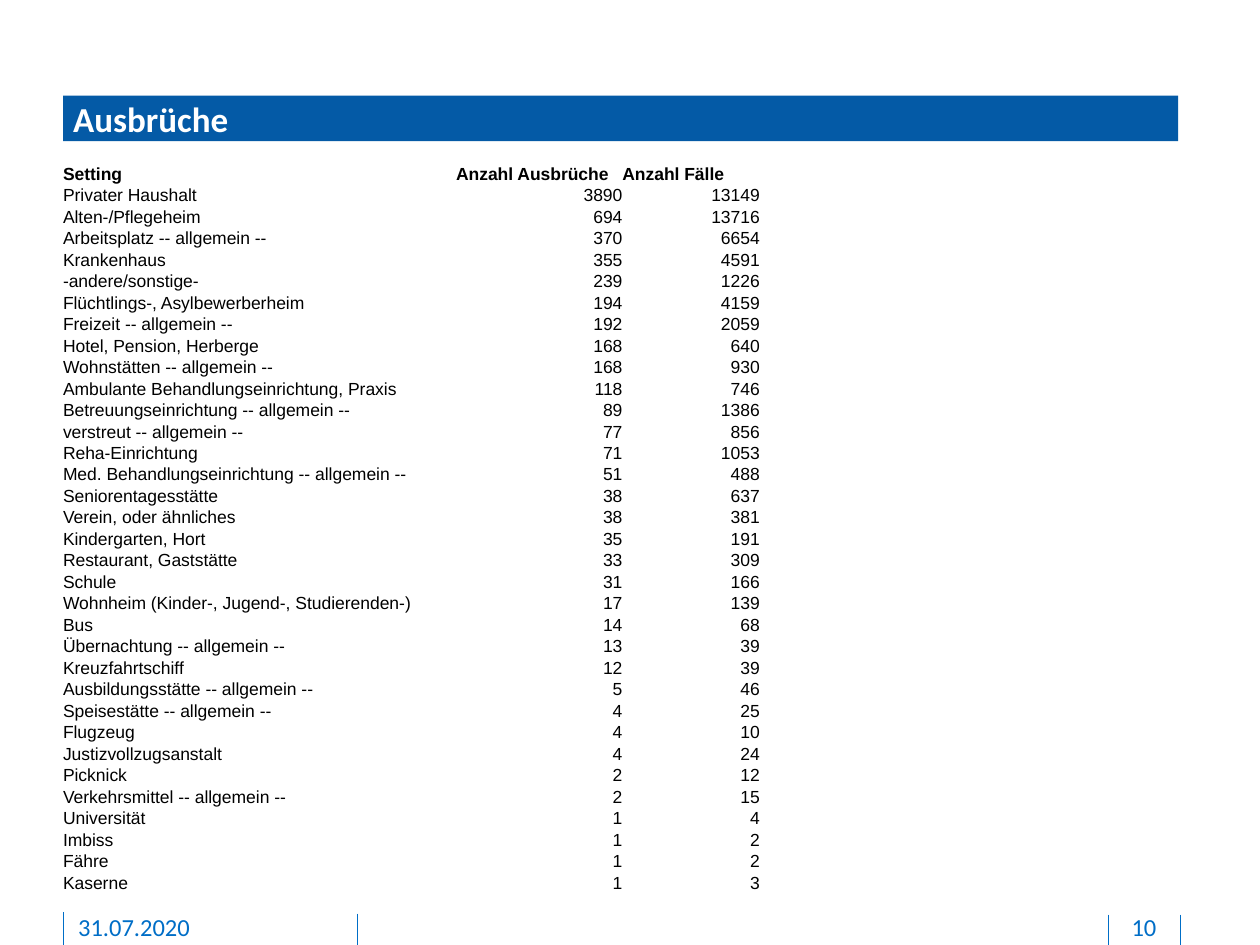
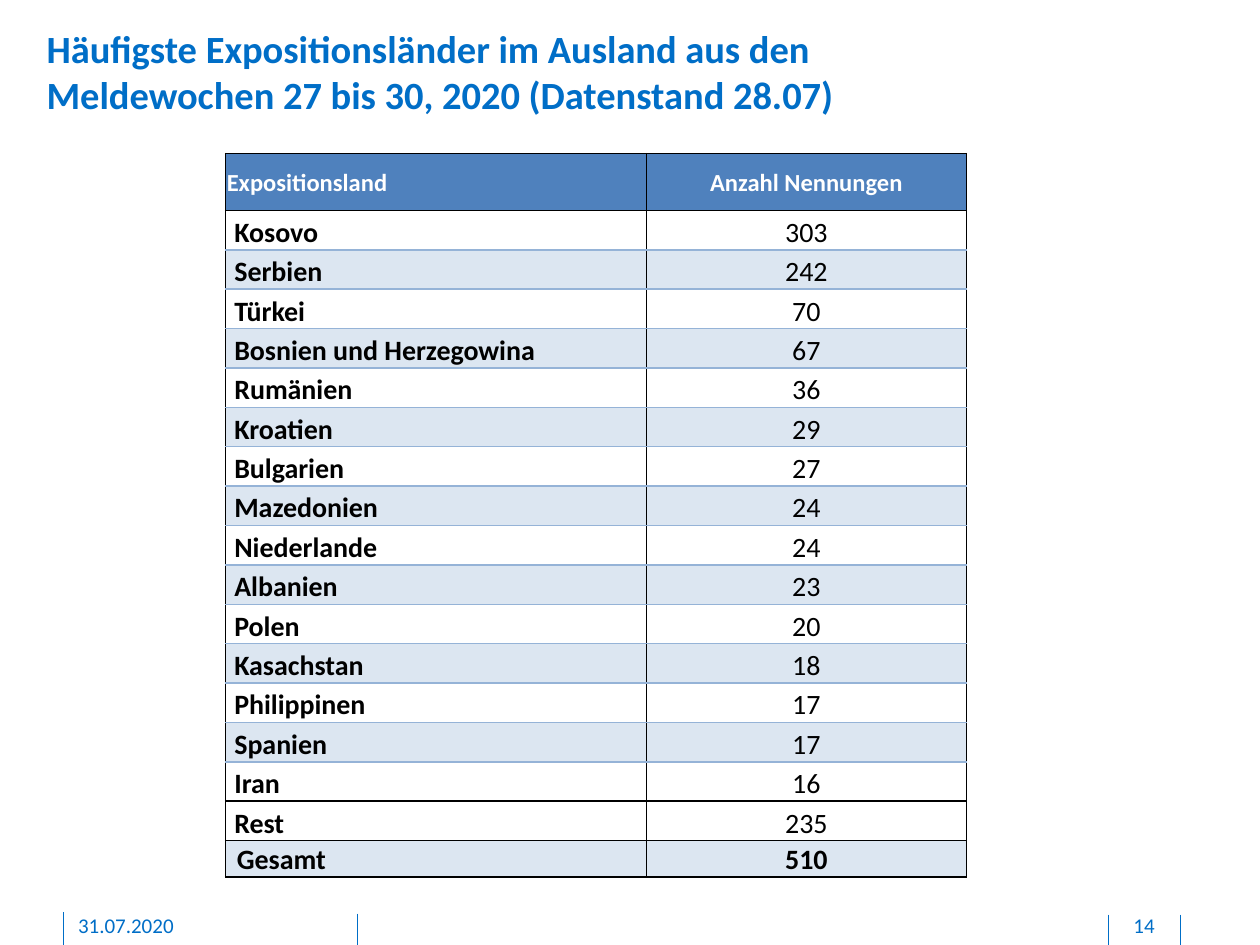
from collections.abc import Callable
from dataclasses import dataclass, replace

import pptx
import pptx.dml.color
import pptx.enum.shapes
import pptx.enum.text
import pptx.oxml
import pptx.oxml.ns
import pptx.util

RGBColor = pptx.dml.color.RGBColor
Anchor = pptx.enum.text.MSO_ANCHOR
Align = pptx.enum.text.PP_ALIGN
Inches, Pt = pptx.util.Inches, pptx.util.Pt

# Shared colours, fonts and sizes
BLUE = RGBColor(0x00, 0x6E, 0xC7)
BAND = RGBColor(0x04, 0x5A, 0xA6)
HEADER = RGBColor(0x4F, 0x81, 0xBD)
STRIPE = RGBColor(0xDC, 0xE6, 0xF1)
RULE = RGBColor(0x95, 0xB3, 0xD7)
BLACK = RGBColor(0x00, 0x00, 0x00)
WHITE = RGBColor(0xFF, 0xFF, 0xFF)
CALIBRI, ARIAL = "Calibri", "Arial"
WIDTH, HEIGHT = Inches(10), Inches(7.5)
PLAIN_TABLE = "{2D5ABB26-0587-4C30-8999-92F81FD0307C}"
DATE = "31.07.2020"

# Footer rules: (x, top) in percent of the slide, all running to the bottom edge
FOOTER_RULES = ((28.4, 96.67), (5, 96.53), (93.7, 96.8), (88, 96.8))


@dataclass(frozen=True)
class Box:
    """Left, top, width and height in percent of the slide."""
    left: float
    top: float
    width: float
    height: float

    def emu(self) -> tuple[int, int, int, int]:
        return across(self.left), down(self.top), across(self.width), down(self.height)


@dataclass(frozen=True)
class TextStyle:
    size: float
    color: RGBColor = BLACK
    bold: bool = False
    font: str = CALIBRI
    align: Align = Align.LEFT


@dataclass(frozen=True)
class CellStyle:
    text: TextStyle
    anchor: Anchor = Anchor.BOTTOM
    margins: tuple[float, float, float, float] = (0, 0, 0, 0)
    spacing: float | None = None
    indent: float = 0
    fill: RGBColor | None = None
    # Colours of the top and bottom borders; None leaves the cell open
    edges: tuple[RGBColor, RGBColor] | None = None


OUTBREAKS = (
    ("Setting", "Anzahl Ausbrüche", "Anzahl Fälle"),
    ("Privater Haushalt", 3890, 13149),
    ("Alten-/Pflegeheim", 694, 13716),
    ("Arbeitsplatz -- allgemein --", 370, 6654),
    ("Krankenhaus", 355, 4591),
    ("-andere/sonstige-", 239, 1226),
    ("Flüchtlings-, Asylbewerberheim", 194, 4159),
    ("Freizeit -- allgemein --", 192, 2059),
    ("Hotel, Pension, Herberge", 168, 640),
    ("Wohnstätten -- allgemein --", 168, 930),
    ("Ambulante Behandlungseinrichtung, Praxis", 118, 746),
    ("Betreuungseinrichtung -- allgemein --", 89, 1386),
    ("verstreut -- allgemein --", 77, 856),
    ("Reha-Einrichtung", 71, 1053),
    ("Med. Behandlungseinrichtung -- allgemein --", 51, 488),
    ("Seniorentagesstätte", 38, 637),
    ("Verein, oder ähnliches", 38, 381),
    ("Kindergarten, Hort", 35, 191),
    ("Restaurant, Gaststätte", 33, 309),
    ("Schule", 31, 166),
    ("Wohnheim (Kinder-, Jugend-, Studierenden-)", 17, 139),
    ("Bus", 14, 68),
    ("Übernachtung -- allgemein --", 13, 39),
    ("Kreuzfahrtschiff", 12, 39),
    ("Ausbildungsstätte -- allgemein --", 5, 46),
    ("Speisestätte -- allgemein --", 4, 25),
    ("Flugzeug", 4, 10),
    ("Justizvollzugsanstalt", 4, 24),
    ("Picknick", 2, 12),
    ("Verkehrsmittel -- allgemein --", 2, 15),
    ("Universität", 1, 4),
    ("Imbiss", 1, 2),
    ("Fähre", 1, 2),
    ("Kaserne", 1, 3),
)

COUNTRIES = (
    ("Expositionsland", "Anzahl Nennungen"),
    ("Kosovo", 303),
    ("Serbien", 242),
    ("Türkei", 70),
    ("Bosnien und Herzegowina", 67),
    ("Rumänien", 36),
    ("Kroatien", 29),
    ("Bulgarien", 27),
    ("Mazedonien", 24),
    ("Niederlande", 24),
    ("Albanien", 23),
    ("Polen", 20),
    ("Kasachstan", 18),
    ("Philippinen", 17),
    ("Spanien", 17),
    ("Iran", 16),
    ("Rest", 235),
    ("Gesamt", 510),
)
REST, TOTAL = len(COUNTRIES) - 2, len(COUNTRIES) - 1


def across(percent: float) -> int:
    return round(WIDTH * percent / 100)


def down(percent: float) -> int:
    return round(HEIGHT * percent / 100)


def write(tf, text: str, style: TextStyle):
    """Put one formatted run into the first paragraph."""
    p = tf.paragraphs[0]
    p.alignment = style.align
    r = p.add_run()
    r.text = text
    r.font.name, r.font.size, r.font.bold = style.font, Pt(style.size), style.bold
    r.font.color.rgb = style.color
    return p


def set_frame(tf, anchor: Anchor, left: float = 0, bottom: float = 0) -> None:
    tf.word_wrap = True
    tf.auto_size = pptx.enum.text.MSO_AUTO_SIZE.NONE
    tf.vertical_anchor = anchor
    tf.margin_left, tf.margin_bottom = Inches(left), Inches(bottom)
    tf.margin_top = tf.margin_right = 0


def add_footer_text(s, box: Box, text: str, style: TextStyle) -> None:
    tf = s.shapes.add_textbox(*box.emu()).text_frame
    set_frame(tf, Anchor.TOP, bottom=0.05)
    write(tf, text, style)


def new_slide(prs, number: int, footer_size: float):
    """Add a slide with the footer rules, date and slide number."""
    s = prs.slides.add_slide(prs.slide_layouts[5])
    for x, top in FOOTER_RULES:
        line = s.shapes.add_connector(pptx.enum.shapes.MSO_CONNECTOR.STRAIGHT,
                                      across(x), down(top), across(x), HEIGHT)
        line.line.color.rgb, line.line.width = BLUE, Pt(0.5)
        line._element.spPr.append(pptx.oxml.parse_xml(
            f"<a:effectLst {pptx.oxml.ns.nsdecls('a')}/>"))
    style = TextStyle(footer_size, BLUE)
    add_footer_text(s, Box(6.2, 96.53, 20.3, 2.8), DATE, style)
    add_footer_text(s, Box(88.1, 96.53, 5.4, 2.8), str(number),
                    replace(style, align=Align.CENTER))
    return s


def set_title(s, box: Box, text: str, style: TextStyle, fill: RGBColor | None = None) -> None:
    sp = s.shapes.title
    sp.left, sp.top, sp.width, sp.height = box.emu()
    if fill is None:
        set_frame(sp.text_frame, Anchor.TOP)
    else:
        sp.fill.solid()
        sp.fill.fore_color.rgb = fill
        set_frame(sp.text_frame, Anchor.MIDDLE, left=0.08)
    write(sp.text_frame, text, style)


def set_borders(cell, top: RGBColor, bottom: RGBColor) -> None:
    tc_pr = cell._tc.get_or_add_tcPr()
    for side, color in (("L", BLACK), ("R", BLACK), ("T", top), ("B", bottom)):
        tc_pr.append(pptx.oxml.parse_xml(
            f'<a:ln{side} {pptx.oxml.ns.nsdecls("a")} w="{Pt(1)}"><a:solidFill>'
            f'<a:srgbClr val="{color}"/></a:solidFill></a:ln{side}>'))


def fill_cell(cell, text: str, style: CellStyle) -> None:
    cell.vertical_anchor = style.anchor
    (cell.margin_left, cell.margin_top,
     cell.margin_right, cell.margin_bottom) = map(Inches, style.margins)
    if style.edges:
        set_borders(cell, *style.edges)
    if style.fill is None:
        cell.fill.background()
    else:
        cell.fill.solid()
        cell.fill.fore_color.rgb = style.fill
    p = write(cell.text_frame, text, style.text)
    if style.spacing:
        p.line_spacing = style.spacing
    if style.indent:
        p._p.get_or_add_pPr().set("marL", str(Inches(style.indent)))


def add_data_table(s, left: float, top: float, columns: tuple[float, ...],
                   heights: list[float], data: tuple,
                   style_of: Callable[[int, int], CellStyle]) -> None:
    box = Box(left, top, sum(columns), sum(heights))
    table = s.shapes.add_table(len(data), len(columns), *box.emu()).table
    table.first_row = table.horz_banding = False
    table._tbl.tblPr.find(pptx.oxml.ns.qn("a:tableStyleId")).text = PLAIN_TABLE
    for column, width in zip(table.columns, columns):
        column.width = across(width)
    for i, (row, height) in enumerate(zip(table.rows, heights)):
        row.height = down(height)
        for j, value in enumerate(data[i]):
            fill_cell(table.cell(i, j), str(value), style_of(i, j))


def outbreak_style(i: int, j: int) -> CellStyle:
    align = Align.RIGHT if i and j else Align.LEFT
    return CellStyle(TextStyle(10, bold=i == 0, font=ARIAL, align=align))


def country_style(i: int, j: int) -> CellStyle:
    def edge(k: int) -> RGBColor:
        return RULE if 1 < k < REST else BLACK

    edges = (edge(i), edge(i + 1))
    align = Align.CENTER if j else Align.LEFT
    if i in (0, TOTAL):
        text = TextStyle(16, bold=True, align=align)
        if i == 0:
            text = replace(text, size=14, color=WHITE)
        return CellStyle(text, Anchor.MIDDLE, (0.01, 0.01, 0.01, 0),
                         indent=0.08 if i and not j else 0,
                         fill=STRIPE if i else HEADER, edges=edges)
    return CellStyle(TextStyle(16, bold=j == 0, align=align),
                     margins=(0.07, 0, 0.07, 0), spacing=1.15,
                     fill=STRIPE if i % 2 == 0 and i < REST else None, edges=edges)


def main() -> None:
    prs = pptx.Presentation()
    prs.slide_width, prs.slide_height = WIDTH, HEIGHT

    # Outbreaks by setting
    s = new_slide(prs, 10, 14)
    set_title(s, Box(5, 10.13, 88.5, 4.8), "Ausbrüche",
              TextStyle(20, WHITE, bold=True), BAND)
    rows = len(OUTBREAKS)
    add_data_table(s, 5, 17.2, (31.2, 13.2, 10.9), [77.33 / rows] * rows,
                   OUTBREAKS, outbreak_style)

    # Countries of exposure
    s = new_slide(prs, 14, 12)
    set_title(s, Box(3.7, 2.67, 77.4, 9.87),
              "Häufigste Expositionsländer im Ausland aus den "
              "Meldewochen 27 bis 30, 2020 (Datenstand 28.07)",
              TextStyle(22, BLUE, bold=True))
    add_data_table(s, 17.9, 16.27, (33.4, 25.4), [6] + [3.87] * TOTAL,
                   COUNTRIES, country_style)

    prs.save("out.pptx")


if __name__ == "__main__":
    main()
